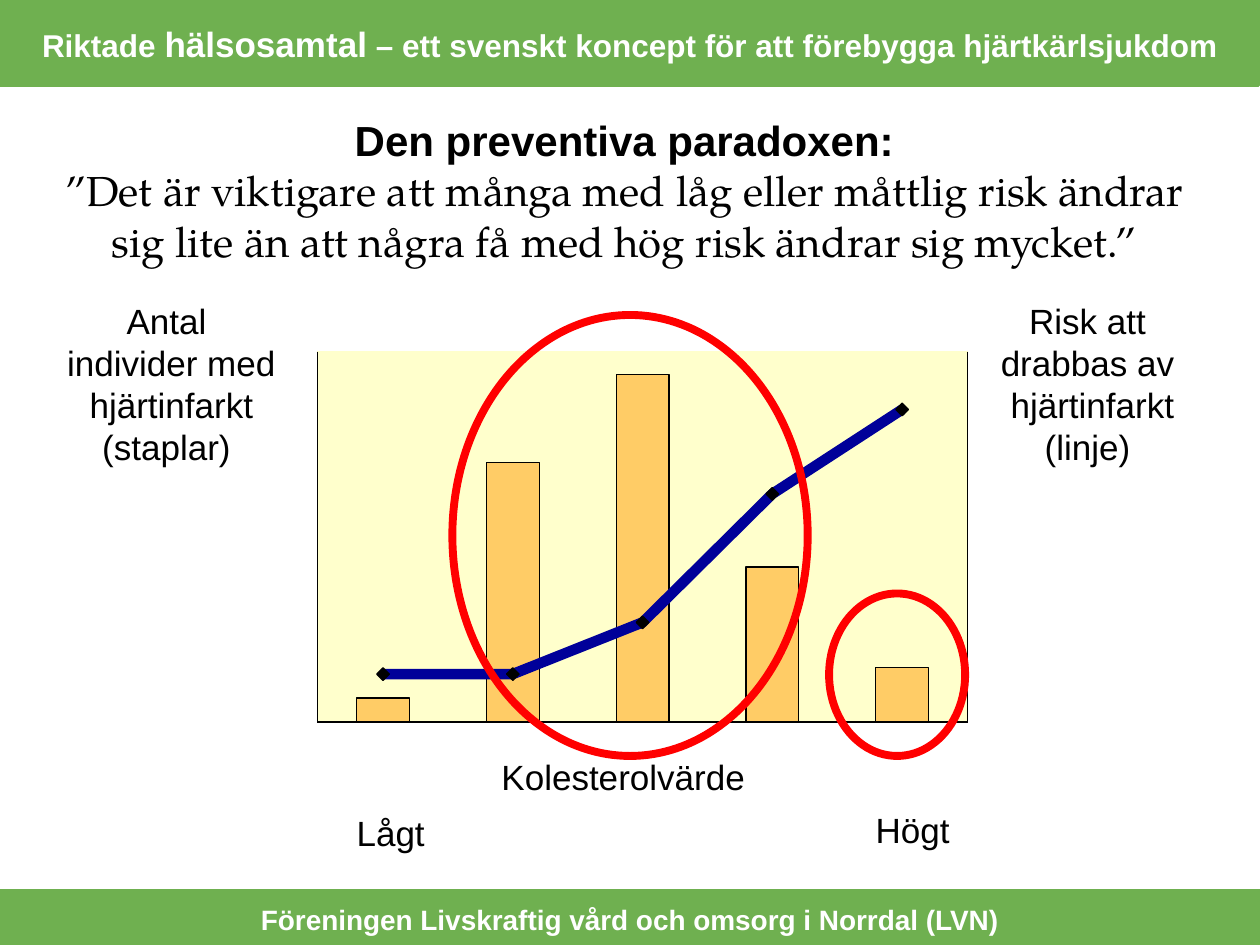
from pptx import Presentation
from pptx.dml.color import RGBColor
from pptx.enum.shapes import MSO_CONNECTOR, MSO_SHAPE
from pptx.enum.text import PP_ALIGN
from pptx.oxml import parse_xml
from pptx.oxml.ns import nsdecls
from pptx.util import Inches, Pt

RECT, OVAL, DIAMOND = MSO_SHAPE.RECTANGLE, MSO_SHAPE.OVAL, MSO_SHAPE.DIAMOND
STRAIGHT = MSO_CONNECTOR.STRAIGHT
LEFT, CENTER = PP_ALIGN.LEFT, PP_ALIGN.CENTER

COLORS = {
    "band": "6FB050", "white": "FFFFFF", "black": "000000", "plot": "FFFFCC",
    "bar": "FFCC66", "curve": "000099", "ring": "FF0000",
}
SANS, SERIF = "Arial", "TeX Gyre Pagella"

# Heights above the base line, in inches, one per cholesterol class
BAR_HEIGHTS = [0.19, 2.06, 2.76, 1.23, 0.43]
RISK_HEIGHTS = [0.38, 0.38, 0.79, 1.81, 2.48]
BAR_WIDTH = 0.42
FIRST_CENTER, CLASS_STEP = 0.52, 1.03
MARKER = 0.1


def color(name):
    return RGBColor.from_string(COLORS[name])


def paint(shape, fill=None, line=None, width=0.75):
    shape.shadow.inherit = False
    if fill:
        shape.fill.solid()
        shape.fill.fore_color.rgb = color(fill)
    else:
        shape.fill.background()
    if line:
        shape.line.color.rgb = color(line)
        shape.line.width = Pt(width)
    else:
        shape.line.fill.background()


def add_shape(page, kind, box, **style):
    shape = page.shapes.add_shape(kind, *map(Inches, box))
    paint(shape, **style)
    return shape


def add_rule(page, start, end):
    rule = page.shapes.add_connector(STRAIGHT, *map(Inches, start + end))
    rule.line.color.rgb = color("black")
    rule.line.width = Pt(0.75)
    rule._element.spPr.append(parse_xml(f"<a:effectLst {nsdecls('a')}/>"))


def set_font(font, size, name=SANS, ink="black", bold=False):
    font.size, font.name, font.bold = Pt(size), name, bold
    font.color.rgb = color(ink)


def add_text(page, box, lines, size=20, align=CENTER, wrap=True, inset=True, **style):
    """Place a text box with one paragraph per line."""
    frame = page.shapes.add_textbox(*map(Inches, box)).text_frame
    frame.word_wrap = wrap
    if not inset:
        frame.margin_left = frame.margin_right = 0
        frame.margin_top = frame.margin_bottom = 0
    for index, line in enumerate(lines):
        para = frame.paragraphs[0] if index == 0 else frame.add_paragraph()
        para.alignment = align
        para.add_run().text = line
        set_font(para.font, size, **style)
    return frame


def add_footer(page, box):
    left, top, width, height = box
    add_shape(page, RECT, box, fill="band", line="band", width=2)
    add_text(page, (left + 1.06, top + 0.04, width - 2.12, 0.52),
             ["Föreningen Livskraftig vård och omsorg i Norrdal (LVN)"],
             size=16, ink="white", bold=True)


def add_header(page, box):
    left, top, width, height = box
    add_shape(page, RECT, box, fill="band", line="band", width=2)
    frame = add_text(page, (left + 0.13, top + 0.12, width - 0.24, 0.52),
                     ["Riktade "], size=18, ink="white", bold=True)
    para = frame.paragraphs[0]
    emphasis = para.add_run()
    emphasis.text = "hälsosamtal"
    emphasis.font.size = Pt(20)
    para.add_run().text = " – ett svenskt koncept för att förebygga hjärtkärlsjukdom"


def add_quote(page, box):
    quote = ("”Det är viktigare att många med låg eller måttlig risk ändrar "
             "sig lite än att några få med hög risk ändrar sig mycket.”")
    frame = add_text(page, box, ["Den preventiva paradoxen:", quote], size=24)
    title, body = frame.paragraphs
    title.font.bold = True
    body.font.name = SERIF


def add_diagram(page, box):
    left, top, width, height = box
    right, base = left + width, top + height
    centers = [left + FIRST_CENTER + CLASS_STEP * i for i in range(len(BAR_HEIGHTS))]
    add_shape(page, RECT, box, fill="plot", line="plot")

    # Bars: number of individuals
    for center, tall in zip(centers, BAR_HEIGHTS):
        add_shape(page, RECT, (center - BAR_WIDTH / 2, base - tall, BAR_WIDTH, tall),
                  fill="bar", line="black")

    # Axes
    add_rule(page, (left, top), (left, base))
    add_rule(page, (left, base), (right, base))
    add_rule(page, (right, top), (right, base))

    # Risk curve with its markers
    points = [(x, base - rise) for x, rise in zip(centers, RISK_HEIGHTS)]
    corners = [(Inches(x), Inches(y)) for x, y in points]
    builder = page.shapes.build_freeform(*corners[0])
    builder.add_line_segments(corners[1:], close=False)
    paint(builder.convert_to_shape(), line="curve", width=6)
    for x, y in points:
        add_shape(page, DIAMOND, (x - MARKER / 2, y - MARKER / 2, MARKER, MARKER),
                  fill="black", line="black")

    # Labels below the horizontal axis
    for text, x, drop, wide in [("Kolesterolvärde", 1.46, 0.27, 2.13),
                                ("Lågt", 0.31, 0.71, 0.59),
                                ("Högt", 4.43, 0.69, 0.64)]:
        add_text(page, (left + x, base + drop, wide, 0.36), [text],
                 align=LEFT, wrap=False, inset=False)


def add_axis_titles(page, box):
    left, top, width, height = box
    add_text(page, (left, top, 2.02, height),
             ["Antal ", "individer med", "hjärtinfarkt", "(staplar) "], wrap=False)
    add_text(page, (left + width - 1.8, top, 1.8, height),
             ["Risk att ", "drabbas av ", "hjärtinfarkt", "(linje) "], wrap=False)


def add_rings(page, box):
    """Circle the many at moderate risk and the few at high risk."""
    left, top, width, height = box
    for wide, tall, x in [(1.08, 1.29, left + width - 1.08), (2.82, 3.5, left)]:
        add_shape(page, OVAL, (x, top + height - tall, wide, tall),
                  line="ring", width=4.5)


def main():
    deck = Presentation()
    deck.slide_width, deck.slide_height = Inches(10), Inches(7.5)
    page = deck.slides.add_slide(deck.slide_layouts[6])
    add_footer(page, (0, 7.07, 10, 0.44))
    add_header(page, (-0.01, 0.01, 10, 0.67))
    add_quote(page, (0.35, 0.86, 9.21, 1.31))
    add_diagram(page, (2.52, 2.79, 5.16, 2.94))
    add_axis_titles(page, (0.35, 2.33, 9.22, 1.53))
    add_rings(page, (3.59, 2.5, 4.07, 3.5))
    deck.save("out.pptx")


if __name__ == "__main__":
    main()
